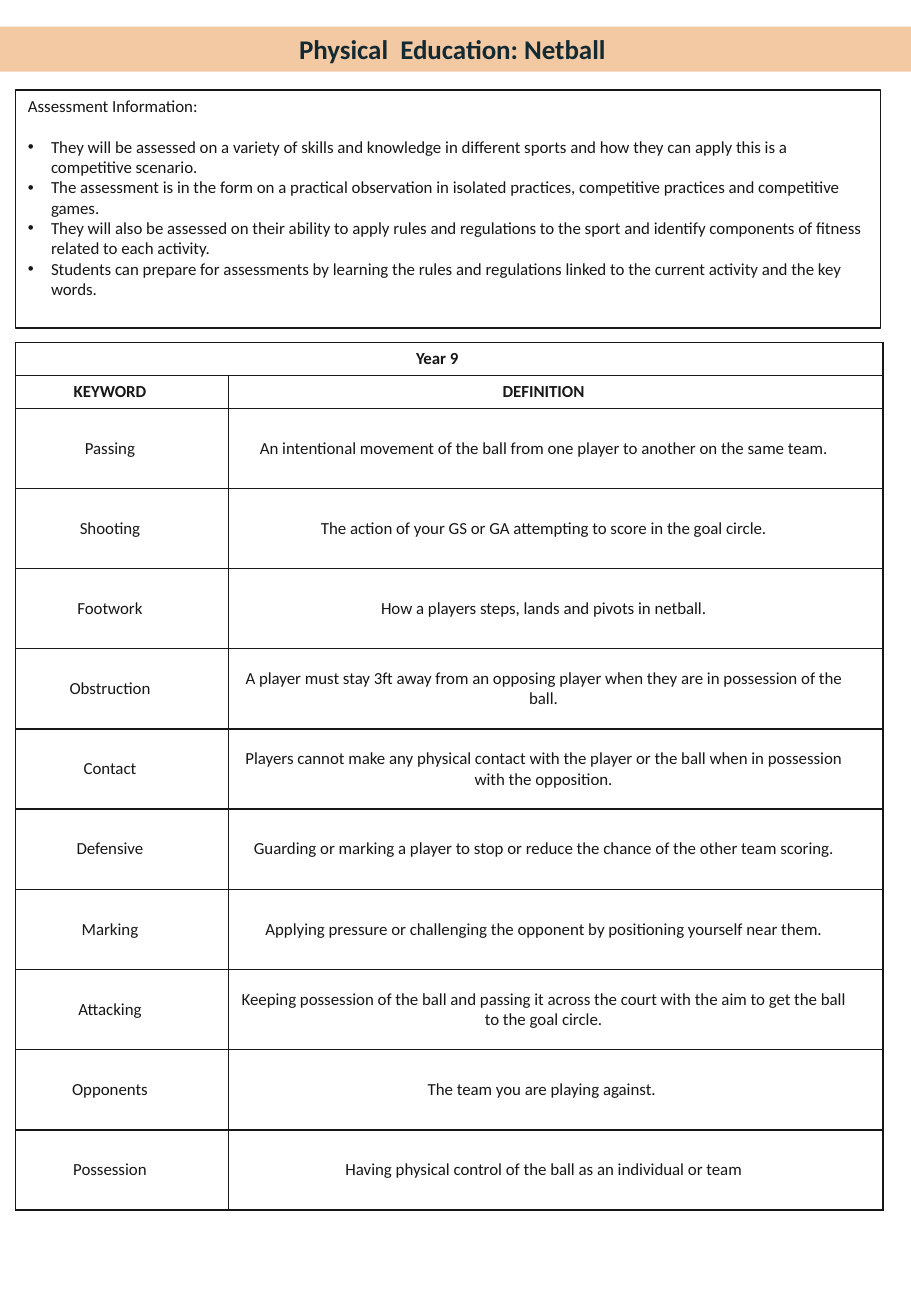
"""Build the netball assessment and keyword sheet."""
from dataclasses import dataclass

from lxml import etree
from pptx import Presentation
from pptx import util as u
from pptx.dml.color import RGBColor
from pptx.enum import text
from pptx.oxml import ns

PX = u.Inches(1) // 100

ASSESSMENT = [
    "They will be assessed on a variety of skills and knowledge in different sports and how they can apply this is a competitive scenario.",
    "The assessment is in the form on a practical observation in isolated practices, competitive practices and competitive games.",
    "They will also be assessed on their ability to apply rules and regulations to the sport and identify components of fitness related to each activity.",
    "Students can prepare for assessments by learning the rules and regulations linked to the current activity and the key words.",
]

KEYWORDS = [
    ("Passing", "An intentional movement of the ball from one player to another on the same team."),
    ("Shooting", "The action of your GS or GA attempting to score in the goal circle."),
    ("Footwork", "How a players steps, lands and pivots in netball."),
    ("Obstruction", "A player must stay 3ft away from an opposing player when they are in possession of the ball."),
    ("Contact", "Players cannot make any physical contact with the player or the ball when in possession with the opposition."),
    ("Defensive", "Guarding or marking a player to stop or reduce the chance of the other team scoring."),
    ("Marking", "Applying pressure or challenging the opponent by positioning yourself near them."),
    ("Attacking", "Keeping possession of the ball and passing it across the court with the aim to get the ball to the goal circle."),
    ("Opponents", "The team you are playing against. "),
    ("Possession", "Having physical control of the ball as an individual or team"),
]


@dataclass(frozen=True)
class Theme:
    font: str = "Calibri"
    band: str = "F3C9A4"
    heading: str = "142A33"
    ink: str = "181717"
    title_size: int = 16
    body_size: int = 10
    box_line: float = 0.75
    grid_line: int = 1


def rgb(value):
    return RGBColor.from_string(value)


def write(p, words, *, font, size, color, bold=False, align=text.PP_ALIGN.LEFT, after=0):
    p.alignment = align
    p.space_before = u.Pt(0)
    p.space_after = u.Pt(after)
    r = p.add_run()
    r.text = words
    r.font.name = font
    r.font.size = u.Pt(size)
    r.font.bold = bold
    r.font.color.rgb = rgb(color)


class Sheet:
    def __init__(self, prs, theme):
        self.theme = theme
        self.s = prs.slides.add_slide(prs.slide_layouts[1])

    def place(self, sp, x, y, w, h):
        sp.left, sp.top, sp.width, sp.height = (v * PX for v in (x, y, w, h))
        tf = sp.text_frame
        tf.word_wrap = True
        tf.auto_size = text.MSO_AUTO_SIZE.NONE
        return tf

    def title(self, words, *box):
        t = self.theme
        sp = self.s.shapes.title
        tf = self.place(sp, *box)
        tf.vertical_anchor = text.MSO_ANCHOR.MIDDLE
        sp.fill.solid()
        sp.fill.fore_color.rgb = rgb(t.band)
        write(tf.paragraphs[0], words, font=t.font, size=t.title_size,
              color=t.heading, bold=True, align=text.PP_ALIGN.CENTER)

    def bullets(self, heading, items, *box, indent):
        t = self.theme
        sp = self.s.placeholders[1]
        tf = self.place(sp, *box)
        tf.vertical_anchor = text.MSO_ANCHOR.TOP
        sp.line.color.rgb = rgb(t.ink)
        sp.line.width = u.Pt(t.box_line)
        style = dict(font=t.font, size=t.body_size, color=t.ink)
        p = tf.paragraphs[0]
        pPr = p._p.get_or_add_pPr()
        pPr.set("marL", "0")
        pPr.set("indent", "0")
        etree.SubElement(pPr, ns.qn("a:buNone"))
        write(p, heading, after=12, **style)
        for item in items:
            p = tf.add_paragraph()
            pPr = p._p.get_or_add_pPr()
            pPr.set("marL", str(indent * PX))
            pPr.set("indent", str(-indent * PX))
            write(p, item, **style)

    def cell(self, cell, words, bold):
        t = self.theme
        tcPr = cell._tc.get_or_add_tcPr()
        for side in "LRTB":
            ln = etree.SubElement(tcPr, ns.qn(f"a:ln{side}"), w=str(u.Pt(t.grid_line)))
            fill = etree.SubElement(ln, ns.qn("a:solidFill"))
            etree.SubElement(fill, ns.qn("a:srgbClr"), val=t.ink)
        cell.fill.background()
        cell.vertical_anchor = text.MSO_ANCHOR.MIDDLE
        cell.margin_left, cell.margin_right = 7 * PX, 27 * PX
        cell.margin_top = cell.margin_bottom = 0
        if words:
            write(cell.text_frame.paragraphs[0], words, font=t.font, size=t.body_size,
                  color=t.ink, bold=bold, align=text.PP_ALIGN.CENTER, after=6)

    def table(self, heads, rows, x, y, *, cols, head_h, row_h):
        cells = heads + rows
        heights = [head_h] * len(heads) + [row_h] * len(rows)
        tbl = self.s.shapes.add_table(len(cells), len(cols), x * PX, y * PX,
                                      sum(cols) * PX, sum(heights) * PX).table
        tbl.first_row = tbl.horz_banding = False
        for col, w in zip(tbl.columns, cols):
            col.width = w * PX
        for i, (h, row) in enumerate(zip(heights, cells)):
            tbl.rows[i].height = h * PX
            for j, words in enumerate(row):
                self.cell(tbl.cell(i, j), words, i < len(heads))
        tbl.cell(0, 0).merge(tbl.cell(0, len(cols) - 1))


def main():
    prs = Presentation()
    prs.slide_width, prs.slide_height = 750 * PX, 1083 * PX
    sheet = Sheet(prs, Theme())
    sheet.title("Physical  Education: Netball ", 0, 22, 750, 37)
    sheet.bullets("Assessment Information:", ASSESSMENT, 13, 74, 712, 196, indent=19)
    sheet.table([("Year 9", ""), ("KEYWORD", "DEFINITION")], KEYWORDS, 13, 282,
                cols=(175, 539), head_h=27, row_h=66)
    prs.save("out.pptx")


if __name__ == "__main__":
    main()
